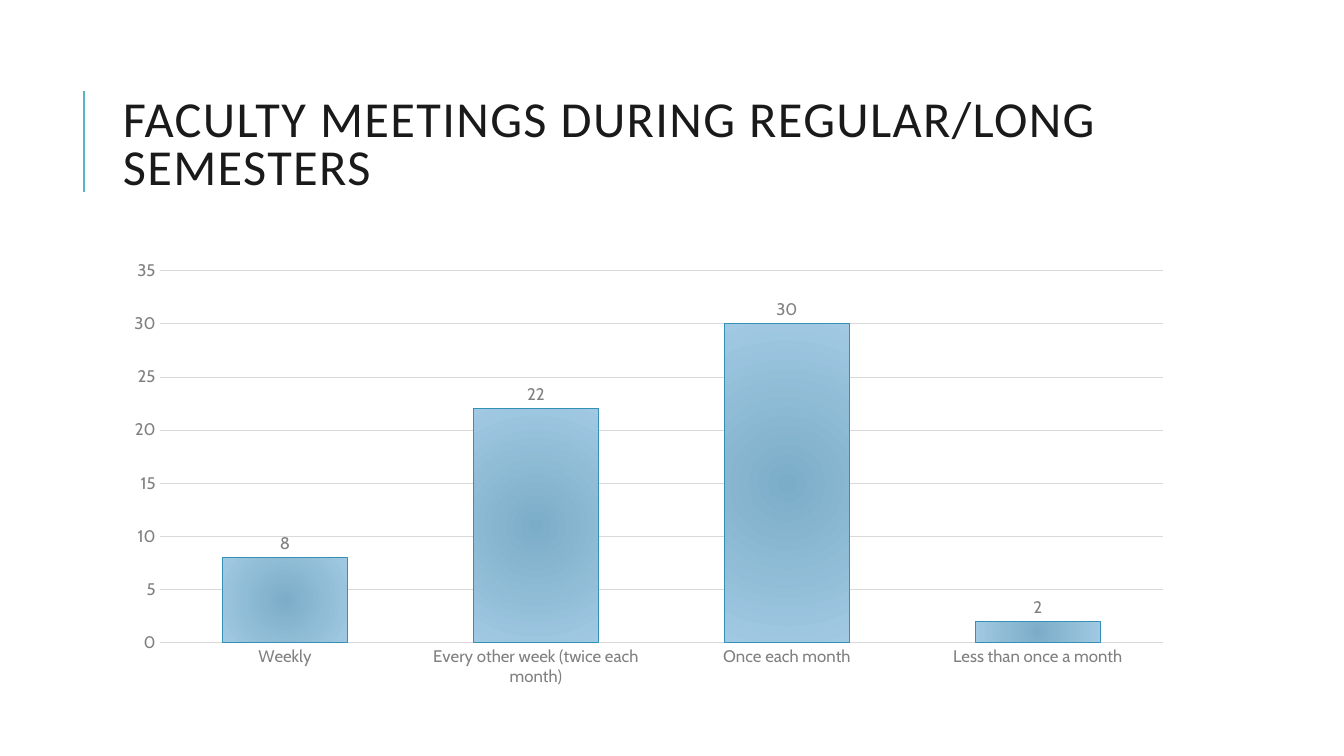
from dataclasses import dataclass

from lxml.etree import SubElement
from pptx import Presentation
from pptx.chart.data import CategoryChartData
from pptx.dml.color import RGBColor
from pptx.enum.chart import XL_CHART_TYPE, XL_LABEL_POSITION, XL_TICK_MARK
from pptx.enum.shapes import MSO_CONNECTOR
from pptx.enum.text import MSO_ANCHOR
from pptx.oxml.ns import qn
from pptx.util import Inches, Pt


@dataclass(frozen=True)
class Theme:
    """Colours, fonts and type sizes of the deck."""
    accent: str = "58B6C0"
    title: str = "1A1A1A"
    label: str = "808080"
    grid: str = "D9D9D9"
    bar_centre: str = "7CADC8"
    bar_edge: str = "A1C9E3"
    bar_line: str = "3391B6"
    title_font: str = "Calibri"
    chart_font: str = "Cabin"
    title_size: int = 36
    label_size: int = 12
    thin: float = 0.75
    rule: float = 1.5


THEME = Theme()
WIDTH, HEIGHT = 13.33, 7.5
LEFT, CONTENT_WIDTH = 1.12, 10.63
TITLE_BOX = (LEFT, 0.64, CONTENT_WIDTH, 1.64)
CHART_BOX = (LEFT, 2.5, CONTENT_WIDTH, 4.4)
TITLE = "FACULTY MEETINGS DURING REGULAR/LONG SEMESTERS"
MEETINGS = {
    "Weekly": 8,
    "Every other week (twice each month)": 22,
    "Once each month": 30,
    "Less than once a month": 2,
}


def set_font(font, name, size, colour):
    """Apply a typeface, size and colour to a font."""
    for attribute, value in {"name": name, "size": Pt(size), "bold": False}.items():
        setattr(font, attribute, value)
    font.color.rgb = RGBColor.from_string(colour)


def set_line(line, colour, width):
    """Apply a colour and width to a line."""
    line.color.rgb = RGBColor.from_string(colour)
    line.width = Pt(width)


def add_title(page, box, text):
    """Place the title and the upright rule to its left."""
    left, top, width, height = box
    rule_left, rule_top = left - 0.29, top + 0.26
    rule = page.shapes.add_connector(
        MSO_CONNECTOR.STRAIGHT,
        *map(Inches, (rule_left, rule_top + 1, rule_left, rule_top)))
    set_line(rule.line, THEME.accent, THEME.rule)
    SubElement(rule._element.spPr, qn("a:effectLst"))

    frame = page.shapes.add_textbox(*map(Inches, box)).text_frame
    frame.word_wrap = True
    frame.vertical_anchor = MSO_ANCHOR.MIDDLE
    para = frame.paragraphs[0]
    para.line_spacing = 0.8
    span = para.add_run()
    span.text = text
    set_font(span.font, THEME.title_font, THEME.title_size, THEME.title)
    span._r.get_or_add_rPr().set("spc", "100")


def fill_radial(fill, centre, edge):
    """Fill with a circular gradient from the centre to the edge."""
    fill.gradient()
    for stop, colour in zip(fill.gradient_stops, (centre, edge)):
        stop.color.rgb = RGBColor.from_string(colour)
    gradient = fill._xPr.find(qn("a:gradFill"))
    gradient.remove(gradient.find(qn("a:lin")))
    circle = SubElement(gradient, qn("a:path"), {"path": "circle"})
    SubElement(circle, qn("a:fillToRect"), dict.fromkeys("ltrb", "100000"))


def add_meeting_chart(page, box, meetings):
    """Place the column chart of meeting frequency."""
    chart_data = CategoryChartData()
    chart_data.categories = list(meetings)
    chart_data.add_series("Series 1", list(meetings.values()))
    chart = page.shapes.add_chart(
        XL_CHART_TYPE.COLUMN_CLUSTERED, *map(Inches, box), chart_data).chart
    chart.has_legend = False
    chart.has_title = False
    label_style = (THEME.chart_font, THEME.label_size, THEME.label)
    set_font(chart.font, *label_style)

    for axis in (chart.category_axis, chart.value_axis):
        axis.major_tick_mark = axis.minor_tick_mark = XL_TICK_MARK.NONE
        set_font(axis.tick_labels.font, *label_style)
    set_line(chart.category_axis.format.line, THEME.grid, THEME.thin)
    values = chart.value_axis
    values.format.line.fill.background()
    set_line(values.major_gridlines.format.line, THEME.grid, THEME.thin)
    for attribute, value in {"minimum_scale": 0, "maximum_scale": 35, "major_unit": 5}.items():
        setattr(values, attribute, value)

    plot = chart.plots[0]
    for attribute, value in {"gap_width": 100, "overlap": -24, "vary_by_categories": False}.items():
        setattr(plot, attribute, value)
    series = plot.series[0]
    fill_radial(series.format.fill, THEME.bar_centre, THEME.bar_edge)
    set_line(series.format.line, THEME.bar_line, THEME.thin)
    labels = series.data_labels
    labels.show_value = True
    labels.position = XL_LABEL_POSITION.OUTSIDE_END
    set_font(labels.font, *label_style)


def main():
    """Build and save the deck."""
    deck = Presentation()
    deck.slide_width, deck.slide_height = Inches(WIDTH), Inches(HEIGHT)
    page = deck.slides.add_slide(deck.slide_layouts[6])
    add_title(page, TITLE_BOX, TITLE)
    add_meeting_chart(page, CHART_BOX, MEETINGS)
    deck.save("out.pptx")


if __name__ == "__main__":
    main()
